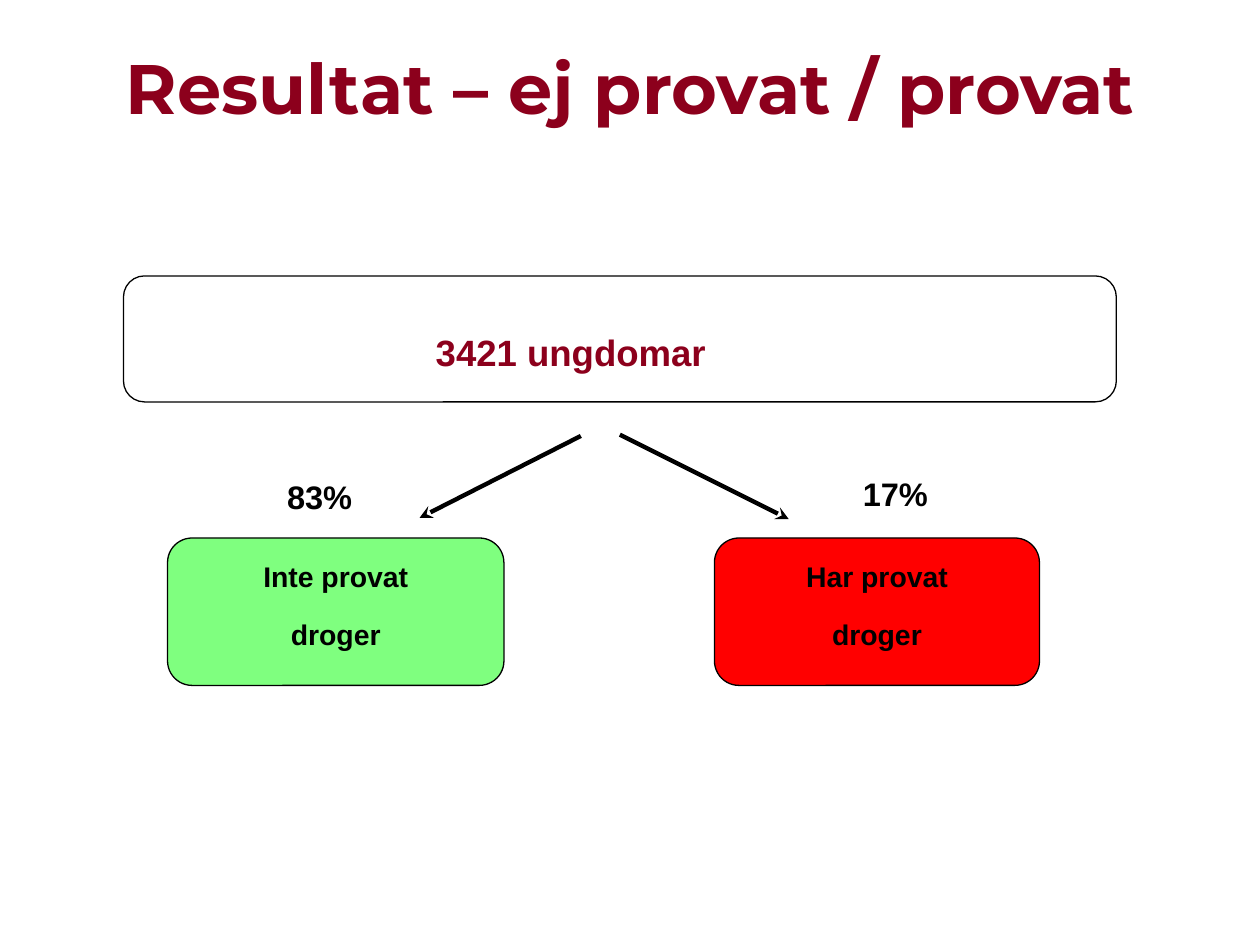
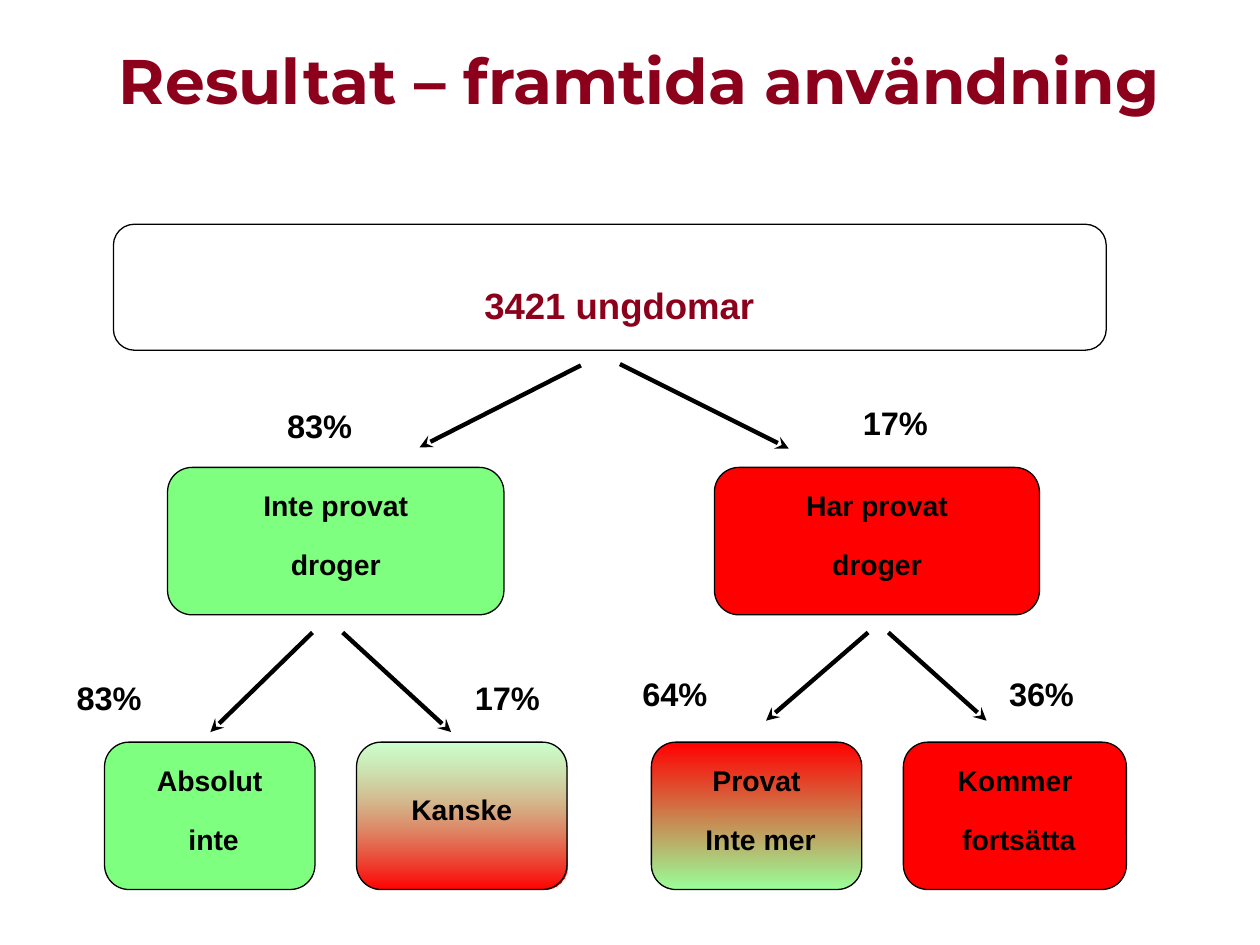
import pptx
import pptx.dml.color
import pptx.enum.shapes
import pptx.enum.text
import pptx.oxml
import pptx.oxml.ns
import pptx.util
from dataclasses import dataclass

Inches = pptx.util.Inches
Pt = pptx.util.Pt
RGB = pptx.dml.color.RGBColor.from_string
Align = pptx.enum.text.PP_ALIGN
Anchor = pptx.enum.text.MSO_ANCHOR
AutoSize = pptx.enum.text.MSO_AUTO_SIZE
qn = pptx.oxml.ns.qn
DRAWING_NS = pptx.oxml.ns.nsdecls("a")


@dataclass(frozen=True)
class Theme:
    title_font: str = "Montserrat"
    body_font: str = "Arial"
    wine: str = "8C001C"
    black: str = "000000"
    total_size: int = 36
    share_size: int = 32
    answer_size: int = 28
    raised: int = 30000
    outline: float = 0.75
    arrow_width: float = 2.5
    # Each fill is a list of (colour, opacity in percent), top to bottom
    clear: tuple = (("FFFFFF", 50),)
    green: tuple = (("00FF00", 50),)
    red: tuple = (("FF0000", 100),)
    green_to_red: tuple = (("99FF99", 50), ("FF0000", 100))
    red_to_green: tuple = (("FF0000", 100), ("99FF99", 100))


theme = Theme()


def write(shape, text, size, color=theme.black, font=theme.body_font,
          align=Align.CENTER, anchor=Anchor.TOP, wrap=False,
          auto_size=AutoSize.NONE, baseline=theme.raised):
    frame = shape.text_frame
    frame.word_wrap = wrap
    frame.auto_size = auto_size
    frame.vertical_anchor = anchor
    for index, line in enumerate(text.split("\n")):
        para = frame.paragraphs[0] if index == 0 else frame.add_paragraph()
        para.alignment = align
        span = para.add_run()
        span.text = line
        span.font.name = font
        span.font.size = Pt(size)
        span.font.bold = True
        span.font.color.rgb = RGB(color)
        if baseline:
            span._r.get_or_add_rPr().set("baseline", str(baseline))


# First split, shared by both slides; heights are relative to the answer boxes
first_boxes = [
    (1.33, 2.67, "Inte provat\ndroger", theme.green),
    (5.67, 2.58, "Har provat\ndroger", theme.red),
]
first_arrows = [(4.61, -0.81, 3.33, -0.16), (4.92, -0.82, 6.26, -0.15)]
first_shares = [(2.18, -0.59, "83%"), (6.75, -0.61, "17%")]

# Second split, on the last slide only
second_boxes = [
    (0.83, 1.67, "Absolut\n inte", theme.green),
    (2.83, 1.67, "Kanske", theme.green_to_red),
    (5.17, 1.67, "Provat\n Inte mer", theme.red_to_green),
    (7.17, 1.77, "Kommer\n fortsätta", theme.red),
]
second_arrows = [
    (2.48, -0.87, 1.67, -0.08), (2.72, -0.87, 3.58, -0.08),
    (6.89, -0.87, 6.08, -0.17), (7.05, -0.87, 7.83, -0.17),
]
second_shares = [(0.51, -0.61, "83%"), (3.67, -0.61, "17%"),
                 (5, -0.64, "64%"), (7.91, -0.64, "36%")]

first_split = (first_boxes, first_arrows, first_shares)
second_split = (second_boxes, second_arrows, second_shares)

slides = [
    dict(title="Resultat – ej provat / provat", title_size=40,
         title_at=(0.5, 0.3, 9, 1.25), total_box=(0.98, 2.19),
         total_text=(3.36, 2.51), total_align=Align.LEFT,
         splits=[(4.27, first_split)]),
    dict(title="Resultat – framtida användning", title_size=36,
         title_at=(0.43, 0.28, 9.29, 1.25), total_box=(0.9, 1.78),
         total_text=(3.57, 2.14), total_align=Align.CENTER,
         splits=[(3.71, first_split), (5.89, second_split)]),
]

deck = pptx.Presentation()
deck.slide_width, deck.slide_height = Inches(10), Inches(7.5)

for content in slides:
    page = deck.slides.add_slide(deck.slide_layouts[5])

    # Title
    title = page.shapes.title
    title.left, title.top, title.width, title.height = map(
        Inches, content["title_at"])
    write(title, content["title"], content["title_size"], color=theme.wine,
          font=theme.title_font, wrap=True, baseline=None)

    # Collect boxes, arrows and labels from every split
    boxes = [(*content["total_box"], 7.88, 1, "", theme.clear)]
    arrows = []
    labels = [(*content["total_text"], 2.69, 0.5, "3421 ungdomar",
               theme.total_size, theme.wine, content["total_align"])]
    for top, (answers, branches, shares) in content["splits"]:
        boxes += [(left, top, width, 1.17, text, fill)
                  for left, width, text, fill in answers]
        arrows += [(x1, top + y1, x2, top + y2) for x1, y1, x2, y2 in branches]
        labels += [(left, top + rise, 1.09, 0.63, text, theme.share_size,
                    theme.black, Align.LEFT) for left, rise, text in shares]

    # Rounded boxes
    for left, top, width, height, text, fill in boxes:
        box = page.shapes.add_shape(
            pptx.enum.shapes.MSO_SHAPE.ROUNDED_RECTANGLE,
            Inches(left), Inches(top), Inches(width), Inches(height))
        box.shadow.inherit = False
        if len(fill) == 1:
            box.fill.solid()
            box.fill.fore_color.rgb = RGB(fill[0][0])
        else:
            box.fill.gradient()
            box.fill.gradient_angle = 270
            for stop, (color, opacity) in zip(box.fill.gradient_stops, fill):
                stop.color.rgb = RGB(color)
        color_nodes = list(box._element.spPr.iter(qn("a:srgbClr")))
        for node, (color, opacity) in zip(color_nodes, fill):
            if opacity < 100:
                node.append(pptx.oxml.parse_xml(
                    f'<a:alpha {DRAWING_NS} val="{opacity * 1000}"/>'))
        box.line.color.rgb = RGB(theme.black)
        box.line.width = Pt(theme.outline)
        if text:
            write(box, text, theme.answer_size, anchor=Anchor.MIDDLE)

    # Arrows
    for x1, y1, x2, y2 in arrows:
        arrow = page.shapes.add_connector(
            pptx.enum.shapes.MSO_CONNECTOR.STRAIGHT,
            Inches(x1), Inches(y1), Inches(x2), Inches(y2))
        arrow.line.color.rgb = RGB(theme.black)
        arrow.line.width = Pt(theme.arrow_width)
        arrow.line._get_or_add_ln().append(pptx.oxml.parse_xml(
            f'<a:tailEnd {DRAWING_NS} type="stealth"/>'))
        arrow._element.spPr.append(
            pptx.oxml.parse_xml(f"<a:effectLst {DRAWING_NS}/>"))

    # Total and percentages
    for left, top, width, height, text, size, color, align in labels:
        label = page.shapes.add_textbox(
            Inches(left), Inches(top), Inches(width), Inches(height))
        write(label, text, size, color=color, align=align,
              auto_size=AutoSize.SHAPE_TO_FIT_TEXT)

deck.save("out.pptx")
